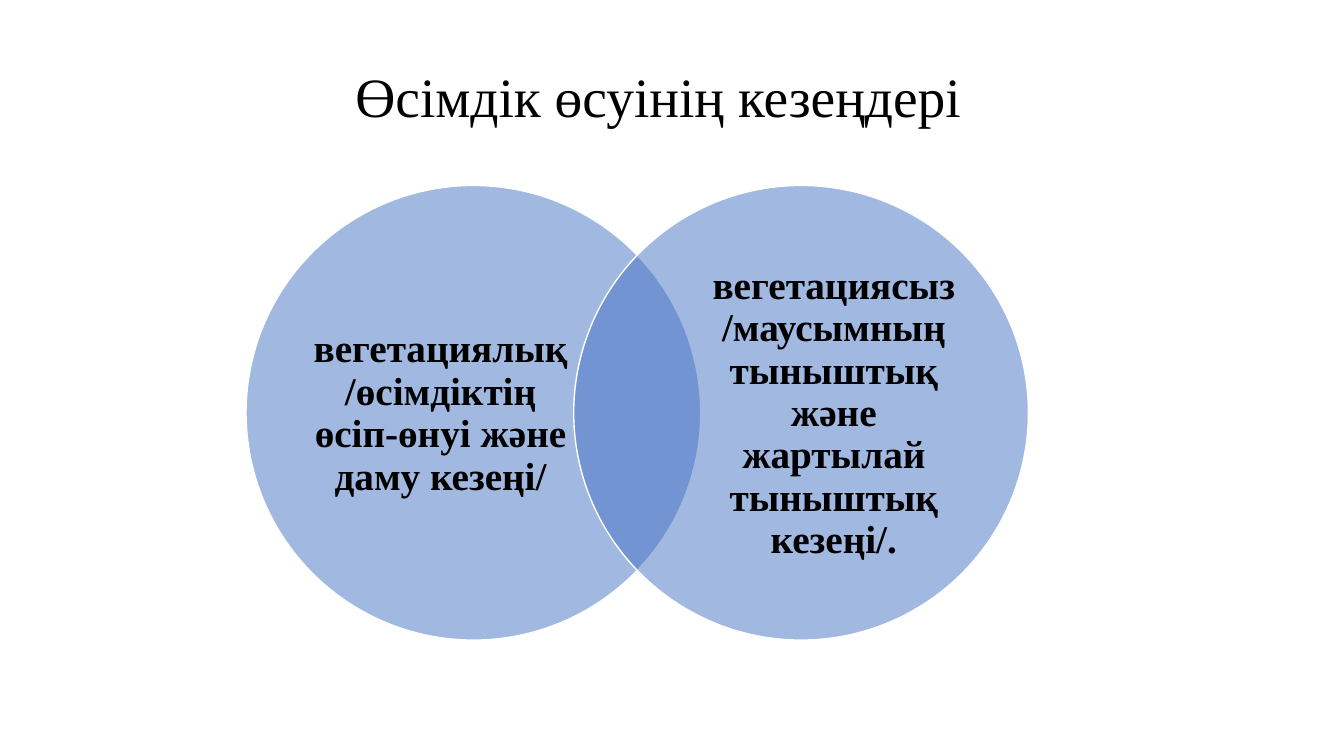
from lxml.etree import SubElement
from pptx import Presentation
from pptx.dml.color import RGBColor
from pptx.enum.shapes import MSO_SHAPE as SHAPE
from pptx.enum.text import MSO_ANCHOR as ANCHOR, PP_ALIGN as ALIGN
from pptx.oxml.ns import qn
from pptx.util import Inches, Pt

BLUE = RGBColor(0x44, 0x72, 0xC4)
WHITE = RGBColor(0xFF, 0xFF, 0xFF)
BLACK = RGBColor(0x00, 0x00, 0x00)
FONT = "Times New Roman"

prs = Presentation()
prs.slide_width = Inches(13.33)
prs.slide_height = Inches(7.5)
s = prs.slides.add_slide(prs.slide_layouts[6])


def add_text(text, left, top, width, height, size, bold=False):
    tf = s.shapes.add_textbox(Inches(left), Inches(top), Inches(width), Inches(height)).text_frame
    tf.word_wrap = True
    tf.vertical_anchor = ANCHOR.MIDDLE
    tf.margin_left = tf.margin_right = tf.margin_top = tf.margin_bottom = 0
    p = tf.paragraphs[0]
    p.alignment = ALIGN.CENTER
    p.line_spacing = 0.9
    r = p.add_run()
    r.text = text
    r.font.name = FONT
    r.font.size = Pt(size)
    r.font.bold = bold
    r.font.color.rgb = BLACK


add_text("Өсімдік өсуінің кезеңдері", 2.57, 0.68, 7.92, 0.62, size=39.6)

DIAMETER = 4.51
PERIODS = [
    (2.44, 3.07, "вегетациялық /өсімдіктің өсіп-өнуі және даму кезеңі/"),
    (5.69, 6.97, "вегетациясыз /маусымның тыныштық және жартылай тыныштық кезеңі/."),
]
for circle_left, text_left, label in PERIODS:
    sp = s.shapes.add_shape(SHAPE.OVAL, Inches(circle_left), Inches(1.84),
                            Inches(DIAMETER), Inches(DIAMETER))
    sp.shadow.inherit = False
    sp.fill.solid()
    sp.fill.fore_color.rgb = BLUE
    color = sp.fill._xPr.find(qn("a:solidFill")).find(qn("a:srgbClr"))
    SubElement(color, qn("a:alpha")).set("val", "50000")
    sp.line.color.rgb = WHITE
    sp.line.width = Pt(1)
    add_text(label, text_left, 2.38, 2.6, 3.45, size=28, bold=True)

prs.save("out.pptx")
